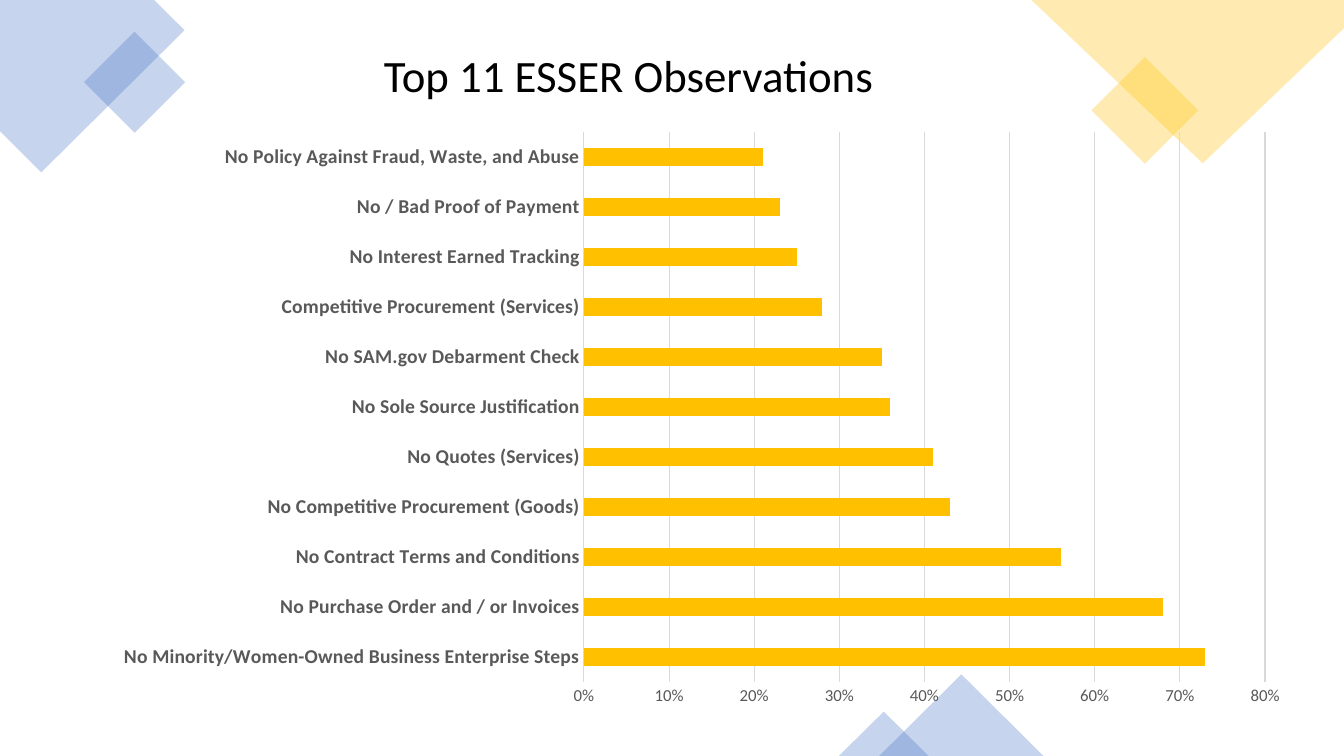
from lxml.etree import SubElement
from pptx import Presentation
from pptx.chart.data import CategoryChartData
from pptx.dml.color import RGBColor
from pptx.enum.chart import XL_CHART_TYPE, XL_TICK_MARK
from pptx.enum.shapes import MSO_SHAPE
from pptx.enum.text import MSO_ANCHOR
from pptx.oxml.ns import qn
from pptx.util import Inches, Pt

BLUE = RGBColor(0x44, 0x72, 0xC4)
GOLD = RGBColor(0xFF, 0xC0, 0x00)
GRAY = RGBColor(0x59, 0x59, 0x59)
LIGHT_GRAY = RGBColor(0xD9, 0xD9, 0xD9)
BLACK = RGBColor(0, 0, 0)
FONT = "Calibri"

OBSERVATIONS = [
    ("No Minority/Women-Owned Business Enterprise Steps", 0.73),
    ("No Purchase Order and / or Invoices", 0.68),
    ("No Contract Terms and Conditions", 0.56),
    ("No Competitive Procurement (Goods)", 0.43),
    ("No Quotes (Services)", 0.41),
    ("No Sole Source Justification", 0.36),
    ("No SAM.gov Debarment Check", 0.35),
    ("Competitive Procurement (Services)", 0.28),
    ("No Interest Earned Tracking", 0.25),
    ("No / Bad Proof of Payment", 0.23),
    ("No Policy Against Fraud, Waste, and Abuse", 0.21),
]


def style_translucent(shape, color):
    """Fill a shape with 30% opaque colour and no outline or shadow."""
    shape.shadow.inherit = False
    shape.fill.solid()
    shape.fill.fore_color.rgb = color
    shape.line.fill.background()
    clr = shape.fill._xPr.find(".//" + qn("a:srgbClr"))
    SubElement(clr, qn("a:alpha"), val="30000")


def add_polygon(s, points, color):
    """Add a translucent polygon through points given in inches."""
    pts = [(Inches(x), Inches(y)) for x, y in points]
    builder = s.shapes.build_freeform(*pts[0])
    builder.add_line_segments(pts[1:], close=True)
    style_translucent(builder.convert_to_shape(), color)


def add_preset(s, kind, x, y, w, h, color, rotation=0):
    """Add a translucent preset shape."""
    shape = s.shapes.add_shape(kind, Inches(x), Inches(y), Inches(w), Inches(h))
    shape.rotation = rotation
    style_translucent(shape, color)


def style_font(font, size, color, bold=False):
    """Set the typeface, size, colour and weight of a font."""
    font.name = FONT
    font.size = Pt(size)
    font.color.rgb = color
    font.bold = bold


def style_line(line, color):
    """Give a chart line its colour and width."""
    line.color.rgb = color
    line.width = Pt(0.75)


def add_title(s, text):
    """Add the slide title."""
    tb = s.shapes.add_textbox(Inches(3.71), Inches(0.42), Inches(6.8), Inches(0.64))
    tf = tb.text_frame
    tf.word_wrap = True
    tf.vertical_anchor = MSO_ANCHOR.MIDDLE
    tf.text = text
    style_font(tf.paragraphs[0].runs[0].font, 32, BLACK)


def add_bar_chart(s):
    """Add the bar chart of observation rates."""
    data = CategoryChartData(number_format="0%")
    data.categories = [name for name, _ in OBSERVATIONS]
    data.add_series("Series 1", [rate for _, rate in OBSERVATIONS])
    chart = s.shapes.add_chart(
        XL_CHART_TYPE.BAR_CLUSTERED,
        Inches(0.99), Inches(1.19), Inches(11.94), Inches(5.93), data).chart
    chart.has_title = False
    chart.has_legend = False
    style_font(chart.font, 10, BLACK)

    plot = chart.plots[0]
    plot.gap_width = 182
    plot.vary_by_categories = False
    fill = plot.series[0].format.fill
    fill.solid()
    fill.fore_color.rgb = GOLD

    cat, val = chart.category_axis, chart.value_axis
    for axis in (cat, val):
        axis.major_tick_mark = XL_TICK_MARK.NONE
        axis.minor_tick_mark = XL_TICK_MARK.NONE
    style_font(cat.tick_labels.font, 14, GRAY, bold=True)
    style_line(cat.format.line, LIGHT_GRAY)
    style_font(val.tick_labels.font, 12, GRAY)
    val.tick_labels.number_format = "0%"
    val.tick_labels.number_format_is_linked = False
    val.minimum_scale, val.maximum_scale, val.major_unit = 0, 0.8, 0.1
    val.format.line.fill.background()
    val.has_major_gridlines = True
    style_line(val.major_gridlines.format.line, LIGHT_GRAY)


def main():
    """Build the slide and save it."""
    prs = Presentation()
    prs.slide_width, prs.slide_height = Inches(13.33), Inches(7.5)
    s = prs.slides.add_slide(prs.slide_layouts[6])
    add_polygon(s, [(0, 0), (1.53, 0), (1.83, 0.3), (0.41, 1.71), (0, 1.3)], BLUE)
    add_preset(s, MSO_SHAPE.RECTANGLE, 0.98, 0.46, 0.71, 0.71, BLUE, 315)
    add_preset(s, MSO_SHAPE.RECTANGLE, 10.98, 0.72, 0.75, 0.75, GOLD, 315)
    add_polygon(s, [(10.23, 0), (13.33, 0), (13.33, 0.28), (11.93, 1.62)], GOLD)
    add_preset(s, MSO_SHAPE.ISOSCELES_TRIANGLE, 8.72, 6.69, 1.63, 0.81, BLUE)
    add_preset(s, MSO_SHAPE.ISOSCELES_TRIANGLE, 8.32, 7.06, 0.89, 0.44, BLUE)
    add_title(s, "Top 11 ESSER Observations")
    add_bar_chart(s)
    prs.save("out.pptx")


if __name__ == "__main__":
    main()
